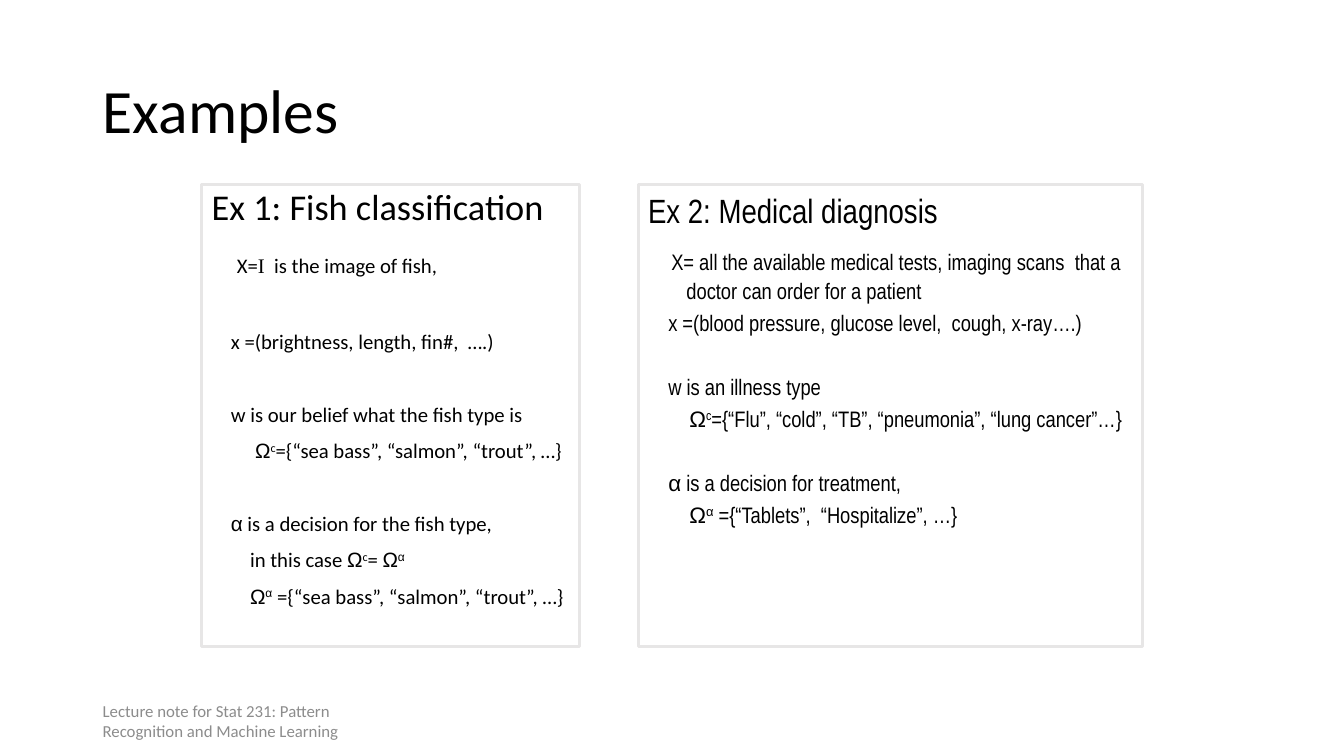
from dataclasses import dataclass
from itertools import groupby

from lxml import etree
from pptx import Presentation
from pptx.dml.color import RGBColor
from pptx.enum import shapes, text
from pptx.oxml import ns
from pptx.util import Inches, Pt


@dataclass(frozen=True)
class Theme:
    ink: RGBColor = RGBColor(0x00, 0x00, 0x00)
    muted: RGBColor = RGBColor(0x8C, 0x8C, 0x8C)
    frame: RGBColor = RGBColor(0xE7, 0xE6, 0xE6)
    sans: str = "Calibri"
    narrow: str = "Arial Narrow"
    greek: str = "Arial"
    serif: str = "Times New Roman"
    title: float = 44
    fish_heading: float = 25.9
    fish_body: float = 14.8
    medical_heading: float = 24
    medical_body: float = 16
    footer: float = 12


theme = Theme()
SYMBOL_FONTS = {"Ω": theme.greek, "α": theme.greek, "I": theme.serif}


def write(paragraph, words, size, font=theme.sans, color=theme.ink,
          left=0, hang=0, before=0, spacing=1.0):
    """Write one paragraph; ^ raises the next character, symbols get their own font."""
    paragraph.alignment = text.PP_ALIGN.LEFT
    paragraph.space_before = Pt(before)
    paragraph.line_spacing = spacing
    properties = paragraph._p.get_or_add_pPr()
    properties.set("marL", str(Inches(left + hang)))
    properties.set("indent", str(Inches(-hang)))
    etree.SubElement(properties, ns.qn("a:buNone"))
    styled = [(char, SYMBOL_FONTS.get(char, font), previous == "^")
              for previous, char in zip(" " + words, words) if char != "^"]
    for (face, raised), chars in groupby(styled, key=lambda item: item[1:]):
        run = paragraph.add_run()
        run.text = "".join(item[0] for item in chars)
        run.font.name, run.font.size = face, Pt(size)
        run.font.color.rgb = color
        if raised:
            run.font._element.set("baseline", "30000")


def place(box, left, top, width, height, anchor):
    box.left, box.top = Inches(left), Inches(top)
    box.width, box.height = Inches(width), Inches(height)
    frame = box.text_frame
    frame.word_wrap = True
    frame.auto_size = text.MSO_AUTO_SIZE.NONE
    frame.vertical_anchor = anchor
    return frame


prs = Presentation()
prs.slide_width, prs.slide_height = Inches(13.33), Inches(7.5)
slide = prs.slides.add_slide(prs.slide_layouts[1])
TOP, MIDDLE = text.MSO_ANCHOR.TOP, text.MSO_ANCHOR.MIDDLE

# Footer
footer = slide.shapes.add_textbox(0, 0, 0, 0)
write(place(footer, 0.92, 6.95, 3, 0.4, MIDDLE).paragraphs[0],
      "Lecture note for Stat 231: Pattern Recognition and Machine Learning",
      theme.footer, color=theme.muted)

# Title
title = place(slide.shapes.title, 0.92, 0.4, 11.5, 1.45, MIDDLE)
write(title.paragraphs[0], "Examples", theme.title, spacing=0.9)

# Example panels
fish = slide.placeholders[1]
medical = slide.shapes.add_shape(shapes.MSO_SHAPE.RECTANGLE, 0, 0, 0, 0)
medical.shadow.inherit = False
medical.fill.background()
for panel, left, width in ((fish, 2, 3.75), (medical, 6.33, 5)):
    place(panel, left, 1.83, width, 4.58, TOP)
    panel.line.color.rgb = theme.frame
    panel.line.width = Pt(2.25)

# Fish classification: words, indent, space before
fish_lines = [
    ("X=I  is the image of fish,", 0.25, 19.6),
    ("x =(brightness, length, fin#,  ….)", 0.19, 38),
    ("w is our belief what the fish type is", 0.19, 36),
    ("Ω^c={“sea bass”, “salmon”, “trout”, …}", 0.43, 10),
    ("α is a decision for the fish type,", 0.19, 36),
    ("in this case Ω^c= Ω^α", 0.38, 10),
    ("Ω^α ={“sea bass”, “salmon”, “trout”, …}", 0.38, 10),
]
write(fish.text_frame.paragraphs[0], "Ex 1: Fish classification",
      theme.fish_heading, spacing=0.9)
for words, left, before in fish_lines:
    write(fish.text_frame.add_paragraph(), words, theme.fish_body,
          left=left, before=before, spacing=0.9)

# Medical diagnosis: words, indent, hanging part, space before, line spacing
medical_lines = [
    ("X= all the available medical tests, imaging scans  that a doctor can order for a patient",
     0.23, 0.15, 11.3, Pt(20.7)),
    ("x =(blood pressure, glucose level,  cough, x-ray….)", 0.2, 0, 3.8, 1.0),
    ("w is an illness type", 0.2, 0, 26.4, 1.0),
    ("Ω^c={“Flu”, “cold”, “TB”, “pneumonia”, “lung cancer”…}", 0.41, 0, 3.8, 1.0),
    ("α is a decision for treatment,", 0.2, 0, 26.4, 1.0),
    ("Ω^α ={“Tablets”,  “Hospitalize”, …}", 0.41, 0, 3.8, 1.0),
]
write(medical.text_frame.paragraphs[0], "Ex 2: Medical diagnosis",
      theme.medical_heading, font=theme.narrow, before=1.7)
for words, left, hang, before, spacing in medical_lines:
    write(medical.text_frame.add_paragraph(), words, theme.medical_body, font=theme.narrow,
          left=left, hang=hang, before=before, spacing=spacing)

prs.save("out.pptx")
